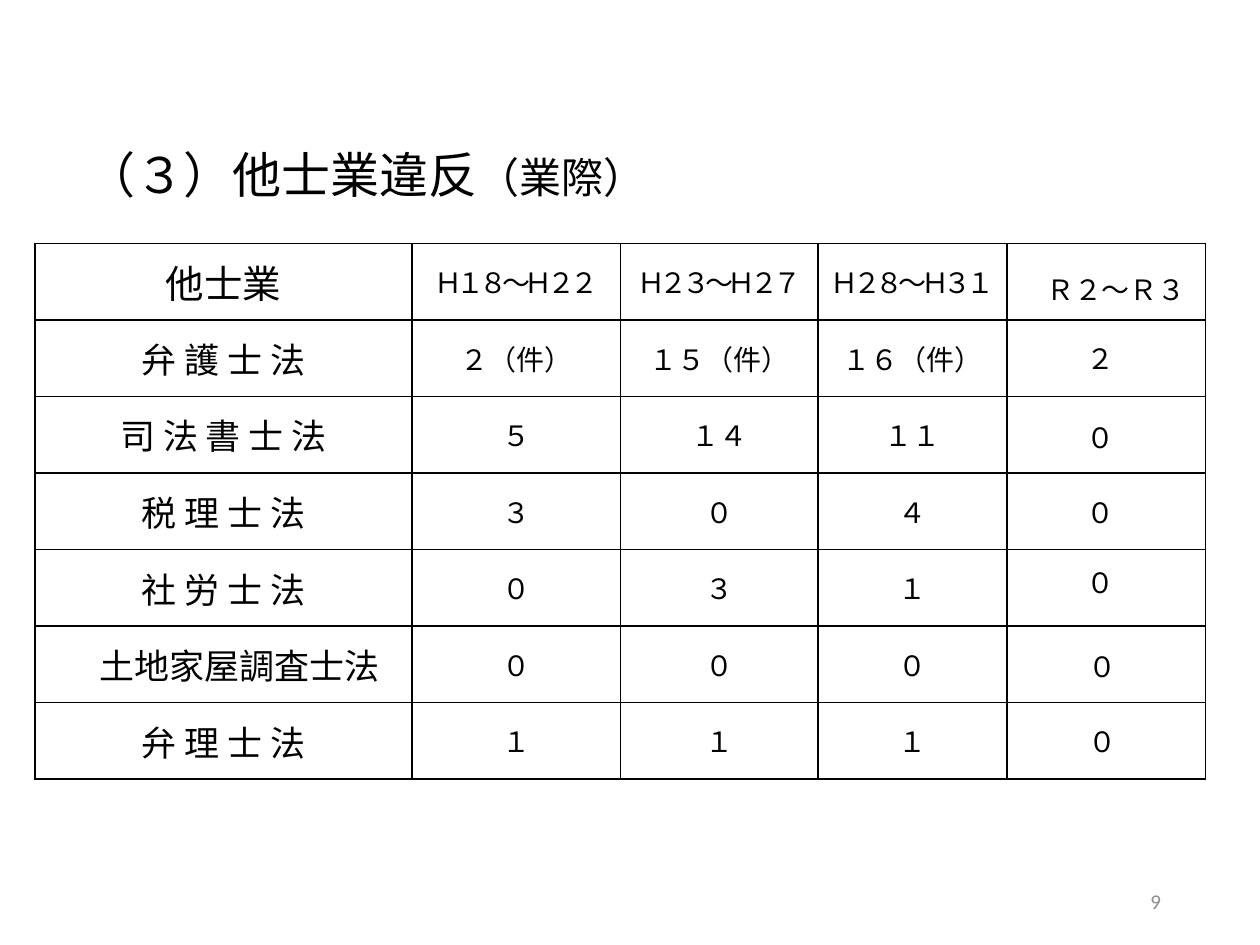
import pptx
import pptx.util
import pptx.dml.color
import pptx.enum.shapes
import pptx.enum.text
from lxml import etree
from pptx.oxml.ns import qn

Pt = pptx.util.Pt
ALIGN = pptx.enum.text.PP_ALIGN
MIDDLE = pptx.enum.text.MSO_ANCHOR.MIDDLE
COLORS = {"ink": "000000", "number": "8C8C8C"}


def style(para, size, face="Calibri", color="ink", align=ALIGN.CENTER):
    para.alignment = align
    para.font.size = Pt(size)
    para.font.name = face
    para.font.color.rgb = pptx.dml.color.RGBColor.from_string(COLORS[color])


def add_text(page, text, left, top, width, height, size, **look):
    box = page.shapes.add_textbox(Pt(left), Pt(top), Pt(width), Pt(height))
    box.text_frame.word_wrap = True
    box.text_frame.vertical_anchor = MIDDLE
    para = box.text_frame.paragraphs[0]
    para.text = text
    style(para, size, **look)


deck = pptx.Presentation()
deck.slide_width, deck.slide_height = Pt(720), Pt(540)
page = deck.slides.add_slide(deck.slide_layouts[1])
title = page.shapes.title
title.element.getparent().remove(title.element)

# Heading in the body placeholder
body = page.placeholders[1]
body.left, body.top, body.width, body.height = Pt(42), Pt(83), Pt(612), Pt(418)
para = body.text_frame.paragraphs[0]
para.line_spacing = 0.9
para.space_before = Pt(0)
properties = para._p.get_or_add_pPr()
properties.set("marL", "0")
properties.set("indent", "0")
etree.SubElement(properties, qn("a:buNone"))
style(para, 28, align=ALIGN.LEFT)
for text, size in [("（３）他士業違反", 28), ("（業際）", 24)]:
    span = para.add_run()
    span.text = text
    span.font.size = Pt(size)

# Page number
add_text(page, "9", 508.5, 500.5, 162, 29, 12, color="number", align=ALIGN.RIGHT)

# Table of violations; the last column also holds the R2-R3 part
ROWS = [
    ["他士業", "Ｈ１８～Ｈ２２", "Ｈ２３～Ｈ２７", "Ｈ２８～Ｈ３１"],
    ["弁 護 士 法", "２（件）", "１５（件）", "１６（件）"],
    ["司 法 書 士 法", "５", "１４", "１１"],
    ["税 理 士 法", "３", "０", "４"],
    ["社 労 士 法", "０", "３", "１"],
    ["土地家屋調査士法", "０", "０", "０"],
    ["弁 理 士 法", "１", "１", "１"],
]
WIDTHS = [215.5, 119, 113, 221.5]
LEFT, TOP, ROW_HEIGHT, DIVIDER = 20, 139, 43.75, 575.5
right, bottom = LEFT + sum(WIDTHS), TOP + ROW_HEIGHT * len(ROWS)
frame = page.shapes.add_table(len(ROWS), len(WIDTHS), Pt(LEFT), Pt(TOP),
                              Pt(right - LEFT), Pt(bottom - TOP))
table = frame.table
table.first_row = table.horz_banding = False
for column, width in zip(table.columns, WIDTHS):
    column.width = Pt(width)
for r, values in enumerate(ROWS):
    table.rows[r].height = Pt(ROW_HEIGHT)
    for c, value in enumerate(values):
        cell = table.cell(r, c)
        cell.vertical_anchor = MIDDLE
        cell.margin_left = cell.margin_right = Pt(4)
        if c == 3:
            cell.margin_right = Pt(right - DIVIDER + 4)
        if value == "土地家屋調査士法":
            cell.margin_left = Pt(22)
        para = cell.text_frame.paragraphs[0]
        span = para.add_run()
        span.text = value
        style(para, 16 if c else 20 if r else 22)
        if r == 0 and c:
            span._r.get_or_add_rPr().set("spc", "-300")
        # Borders come before the fill in the cell properties
        cell_properties = cell._tc.get_or_add_tcPr()
        for side in ("a:lnL", "a:lnR", "a:lnT", "a:lnB"):
            border = etree.SubElement(cell_properties, qn(side), w=str(Pt(1)))
            fill = etree.SubElement(border, qn("a:solidFill"))
            etree.SubElement(fill, qn("a:srgbClr"), val=COLORS["ink"])
        cell.fill.background()

# Divider before the R2-R3 values
line = page.shapes.add_connector(pptx.enum.shapes.MSO_CONNECTOR.STRAIGHT,
                                 Pt(DIVIDER), Pt(TOP), Pt(DIVIDER), Pt(bottom))
line.line.color.rgb = pptx.dml.color.RGBColor.from_string(COLORS["ink"])
line.line.width = Pt(1)
etree.SubElement(line._element.spPr, qn("a:effectLst"))

# R2-R3 heading and values
for text, left, top in [
    ("Ｒ２～Ｒ３", 589.5, 151), ("２", 580.5, 190), ("０", 580.5, 235.5),
    ("０", 580.5, 278.5), ("０", 580.5, 318), ("０", 581.5, 366.5), ("０", 581.5, 409),
]:
    add_text(page, text, left, top, 96.5, 29, 16, face="Arial")

deck.save("out.pptx")
